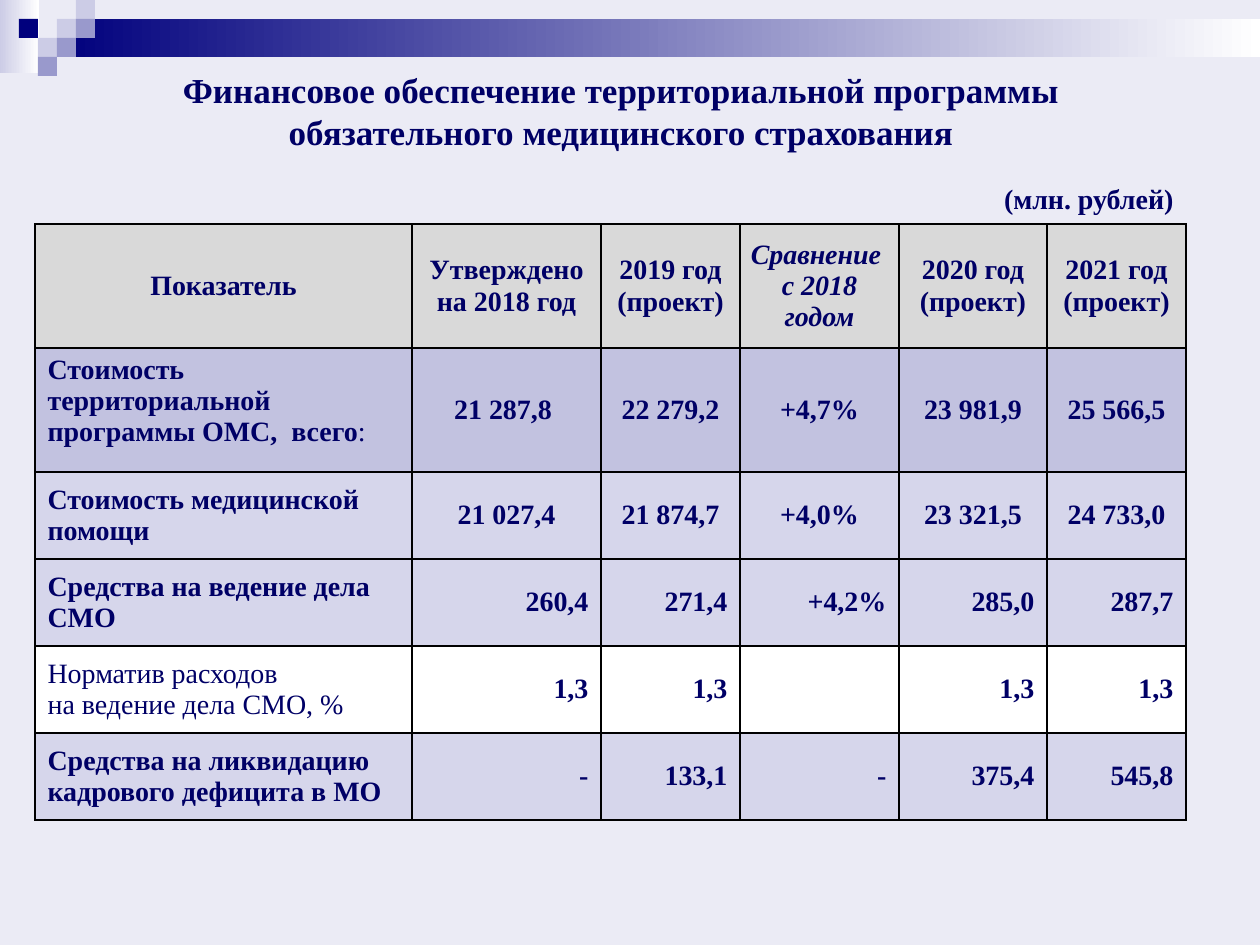
from dataclasses import dataclass
from typing import Any

from lxml import etree
from pptx import Presentation
from pptx.dml.color import RGBColor
from pptx.enum.shapes import MSO_SHAPE
from pptx.enum.text import MSO_ANCHOR, PP_ALIGN
from pptx.oxml.ns import qn
from pptx.util import Emu, Pt

RECTANGLE = MSO_SHAPE.RECTANGLE
LEFT, CENTER, RIGHT = PP_ALIGN.LEFT, PP_ALIGN.CENTER, PP_ALIGN.RIGHT
TOP, MIDDLE = MSO_ANCHOR.TOP, MSO_ANCHOR.MIDDLE

INK = RGBColor(0x00, 0x00, 0x66)
NAVY = RGBColor(0x00, 0x00, 0x7D)
LAVENDER = RGBColor(0x99, 0x99, 0xCC)
PALE = RGBColor(0xCC, 0xCC, 0xE6)
WHITE = RGBColor(0xFF, 0xFF, 0xFF)
BACKDROP = RGBColor(0xEB, 0xEB, 0xF5)
HEADER_GRAY = RGBColor(0xD9, 0xD9, 0xD9)
TOTAL_BLUE = RGBColor(0xC2, 0xC2, 0xE0)
ITEM_BLUE = RGBColor(0xD6, 0xD6, 0xEB)
BORDER = RGBColor(0x00, 0x00, 0x00)

FONT = "Times New Roman"
PX_PER_INCH = 126
GRID = 19
COLUMN_WIDTHS = (377, 189, 139, 159, 148, 139)


@dataclass(frozen=True)
class Block:
    x: int
    y: int
    width: int
    height: int
    color: RGBColor
    fade_to: RGBColor | None = None


@dataclass(frozen=True)
class Row:
    label: str
    values: tuple[str, ...]
    fill: RGBColor
    height: int = 87
    label_align: Any = LEFT
    value_align: Any = RIGHT
    label_anchor: Any = MIDDLE
    label_bold: bool = True
    narrow: bool = False
    italic_column: int | None = None
    light_ending: str = ""


BLOCKS = (
    Block(0, 0, 39, 73, PALE, WHITE),
    Block(3 * GRID, GRID, 1260 - 3 * GRID, 2 * GRID, NAVY, WHITE),
    *(
        Block(column * GRID, line * GRID, GRID, GRID, color)
        for column, line, color in (
            (3, 1, PALE),
            (4, 0, PALE),
            (4, 1, LAVENDER),
            (2, 2, PALE),
            (1, 1, NAVY),
            (3, 2, LAVENDER),
            (2, 3, LAVENDER),
        )
    ),
)

ROWS = (
    Row("Показатель",
        ("Утверждено на 2018 год", "2019 год (проект)", "Сравнение \nс 2018 годом",
         "2020 год (проект)", "2021 год (проект)"),
        HEADER_GRAY, height=124, label_align=CENTER, value_align=CENTER,
        narrow=True, italic_column=3),
    Row("Стоимость территориальной программы ОМС,  всего",
        ("21 287,8 ", "22 279,2", "+4,7%", "23 981,9", "25 566,5"),
        TOTAL_BLUE, height=124, value_align=CENTER, label_anchor=TOP,
        narrow=True, light_ending=":"),
    Row("Стоимость медицинской помощи",
        ("21 027,4", "21 874,7", "+4,0%", "23 321,5", "24 733,0"),
        ITEM_BLUE, value_align=CENTER),
    Row("Средства на ведение дела СМО",
        ("260,4", "271,4", "+4,2%", "285,0", "287,7"), ITEM_BLUE),
    Row("Норматив расходов \nна ведение дела СМО, %",
        ("1,3", "1,3", "", "1,3", "1,3"), WHITE, label_bold=False),
    Row("Средства на ликвидацию кадрового дефицита в МО",
        ("-", "133,1", "-", "375,4", "545,8"), ITEM_BLUE),
)


def px(length: int) -> Emu:
    return Emu(round(length * 914400 / PX_PER_INCH))


def apply(target: Any, values: dict[str, Any]) -> None:
    for name, value in values.items():
        setattr(target, name, value)


def write(paragraph: Any, text: str, align: Any, size: int = 16,
          bold: bool = True, italic: bool = False, light_ending: str = "") -> None:
    paragraph.text = text
    paragraph.alignment = align
    if light_ending:
        paragraph.add_run().text = light_ending
    for run in paragraph.runs:
        apply(run.font, {"name": FONT, "size": Pt(size), "bold": bold, "italic": italic})
        run.font.color.rgb = INK
    if light_ending:
        paragraph.runs[-1].font.bold = False


def draw_block(slide: Any, block: Block) -> None:
    shape = slide.shapes.add_shape(
        RECTANGLE, px(block.x), px(block.y), px(block.width), px(block.height))
    shape.shadow.inherit = False
    shape.line.fill.background()
    if block.fade_to is None:
        shape.fill.solid()
        shape.fill.fore_color.rgb = block.color
        return
    shape.fill.gradient()
    shape.fill.gradient_angle = 0
    for stop, color in zip(shape.fill.gradient_stops, (block.color, block.fade_to)):
        stop.color.rgb = color


def add_borders(cell: Any) -> None:
    properties = cell._tc.get_or_add_tcPr()
    for side in ("a:lnL", "a:lnR", "a:lnT", "a:lnB"):
        line = etree.SubElement(properties, qn(side), w=str(Pt(1)))
        fill = etree.SubElement(line, qn("a:solidFill"))
        etree.SubElement(fill, qn("a:srgbClr"), val=str(BORDER))


def draw_row(table: Any, index: int, row: Row) -> None:
    table.rows[index].height = px(row.height)
    for column, text in enumerate((row.label, *row.values)):
        cell = table.cell(index, column)
        is_label = column == 0
        add_borders(cell)
        cell.fill.solid()
        cell.fill.fore_color.rgb = row.fill
        cell.vertical_anchor = row.label_anchor if is_label else MIDDLE
        if row.narrow and column > 1:
            apply(cell, {"margin_left": px(9), "margin_right": px(9),
                         "margin_top": 0, "margin_bottom": 0})
        write(cell.text_frame.paragraphs[0], text,
              row.label_align if is_label else row.value_align,
              bold=row.label_bold or not is_label,
              italic=column == row.italic_column,
              light_ending=row.light_ending if is_label else "")


def draw_table(slide: Any) -> None:
    table = slide.shapes.add_table(
        len(ROWS), len(COLUMN_WIDTHS), px(35), px(224),
        px(sum(COLUMN_WIDTHS)), px(sum(row.height for row in ROWS))).table
    for column, width in zip(table.columns, COLUMN_WIDTHS):
        column.width = px(width)
    for index, row in enumerate(ROWS):
        draw_row(table, index, row)


def main() -> None:
    deck = Presentation()
    apply(deck, {"slide_width": px(1260), "slide_height": px(945)})
    slide = deck.slides.add_slide(deck.slide_layouts[5])
    slide.background.fill.solid()
    slide.background.fill.fore_color.rgb = BACKDROP

    for block in BLOCKS:
        draw_block(slide, block)

    title = slide.shapes.title
    apply(title, {"left": px(54), "top": px(66), "width": px(1134), "height": px(90)})
    apply(title.text_frame, {"word_wrap": True, "vertical_anchor": MIDDLE})
    write(title.text_frame.paragraphs[0],
          "Финансовое обеспечение территориальной программы "
          "обязательного медицинского страхования", CENTER, size=20)

    draw_table(slide)

    units = slide.shapes.add_textbox(px(948), px(175), px(238), px(47))
    units.text_frame.word_wrap = True
    write(units.text_frame.paragraphs[0], "(млн. рублей)", RIGHT)

    deck.save("out.pptx")


if __name__ == "__main__":
    main()
